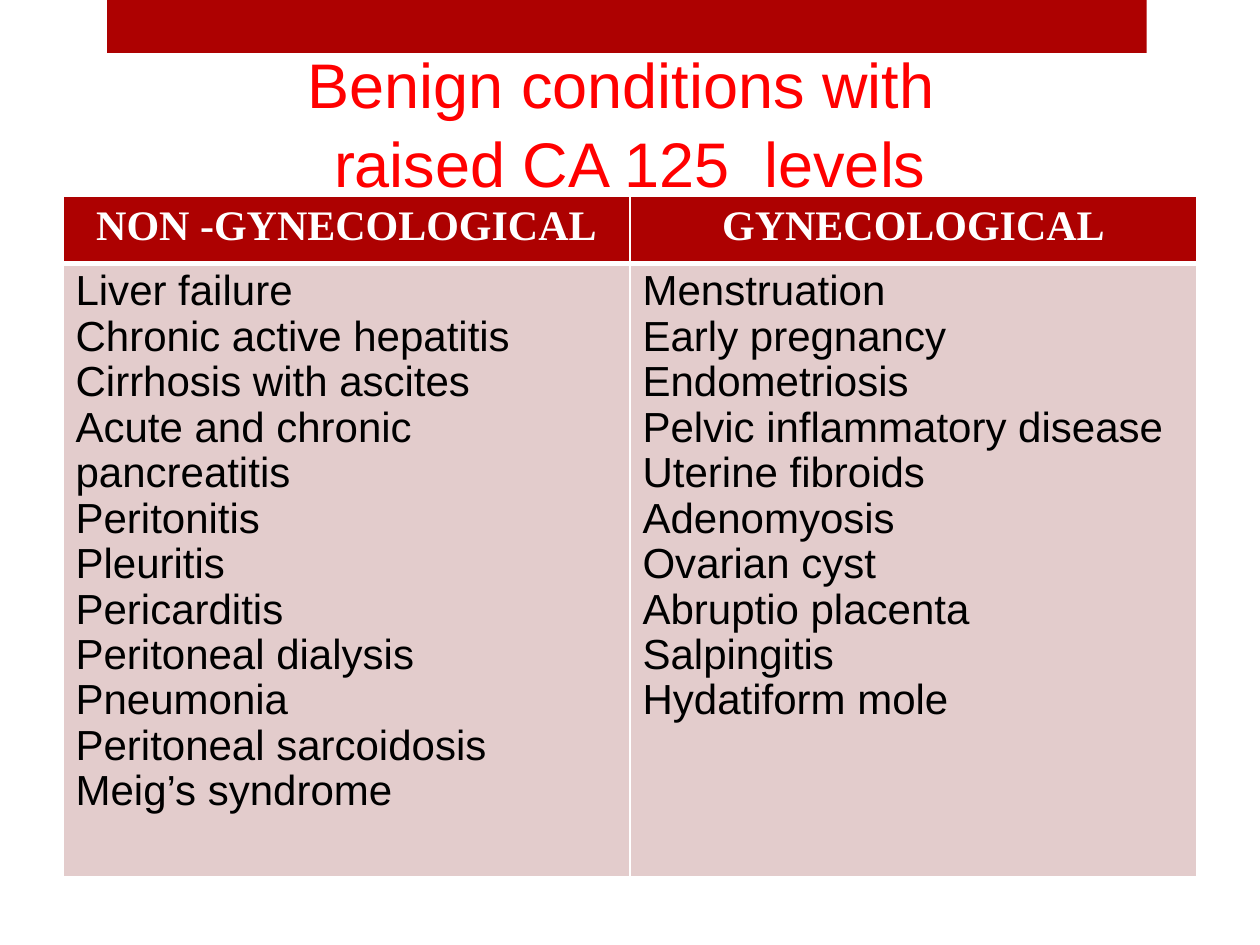
from pptx import Presentation
from pptx.dml.color import RGBColor
from pptx.enum.shapes import MSO_SHAPE
from pptx.enum.text import MSO_ANCHOR, PP_ALIGN
from pptx.oxml import parse_xml
from pptx.oxml.ns import nsdecls
from pptx.util import Inches, Pt

DARK_RED = RGBColor(0xAD, 0x01, 0x01)
BRIGHT_RED = RGBColor(0xFF, 0x00, 0x00)
PALE_RED = RGBColor(0xE3, 0xCC, 0xCC)
WHITE = RGBColor(0xFF, 0xFF, 0xFF)
BLACK = RGBColor(0x00, 0x00, 0x00)

CONDITIONS = {
    "NON -GYNECOLOGICAL": [
        "Liver failure", "Chronic active hepatitis", "Cirrhosis with ascites",
        "Acute and chronic pancreatitis", "Peritonitis", "Pleuritis",
        "Pericarditis", "Peritoneal dialysis", "Pneumonia",
        "Peritoneal sarcoidosis", "Meig’s syndrome",
    ],
    "GYNECOLOGICAL": [
        "Menstruation", "Early pregnancy", "Endometriosis",
        "Pelvic inflammatory disease", "Uterine fibroids", "Adenomyosis",
        "Ovarian cyst", "Abruptio placenta", "Salpingitis", "Hydatiform mole",
    ],
}


def style_text(frame, font_name, size, color, bold=False, align=PP_ALIGN.LEFT, spacing=1.0):
    for paragraph in frame.paragraphs:
        paragraph.alignment = align
        paragraph.line_spacing = spacing
        for run in paragraph.runs:
            run.font.name = font_name
            run.font.size = Pt(size)
            run.font.bold = bold
            run.font.color.rgb = color


def fill_cell(cell, color, top=1, bottom=1):
    """Fill a cell and give it white borders, widths in points."""
    cell.fill.solid()
    cell.fill.fore_color.rgb = color
    widths = {"lnL": 1, "lnR": 1, "lnT": top, "lnB": bottom}
    for position, (side, width) in enumerate(widths.items()):
        border = parse_xml(
            f'<a:{side} {nsdecls("a")} w="{Pt(width)}"><a:solidFill>'
            f'<a:srgbClr val="{WHITE}"/></a:solidFill></a:{side}>')
        cell._tc.get_or_add_tcPr().insert(position, border)


presentation = Presentation()
presentation.slide_width = Inches(10)
presentation.slide_height = Inches(7.5)
slide = presentation.slides.add_slide(presentation.slide_layouts[6])

# Top band
band = slide.shapes.add_shape(
    MSO_SHAPE.RECTANGLE, Inches(0.85), Inches(0), Inches(8.25), Inches(0.42))
band.shadow.inherit = False
band.fill.solid()
band.fill.fore_color.rgb = DARK_RED
band.line.fill.background()

# Title
title = slide.shapes.add_textbox(
    Inches(0.5), Inches(0.33), Inches(9), Inches(1.2)).text_frame
title.word_wrap = True
title.margin_top = title.margin_bottom = 0
title.vertical_anchor = MSO_ANCHOR.TOP
title.text = "Benign conditions with \vraised CA 125  levels"
style_text(title, "Arial", 36, BRIGHT_RED, align=PP_ALIGN.CENTER, spacing=1.05)

# Table of conditions, one column per group
table = slide.shapes.add_table(
    2, len(CONDITIONS), Inches(0.5), Inches(1.56), Inches(9), Inches(5.4)).table
table.rows[0].height = Inches(0.53)
table.rows[1].height = Inches(4.87)
for column, (group, names) in enumerate(CONDITIONS.items()):
    table.columns[column].width = Inches(4.5)

    heading = table.cell(0, column)
    heading.text_frame.text = group
    style_text(heading.text_frame, "Times New Roman", 24, WHITE, True, PP_ALIGN.CENTER)
    fill_cell(heading, DARK_RED, bottom=3)

    body = table.cell(1, column)
    body.text_frame.text = "\n".join(names)
    style_text(body.text_frame, "Arial", 24, BLACK, spacing=0.97)
    fill_cell(body, PALE_RED, top=3)

presentation.save("out.pptx")
